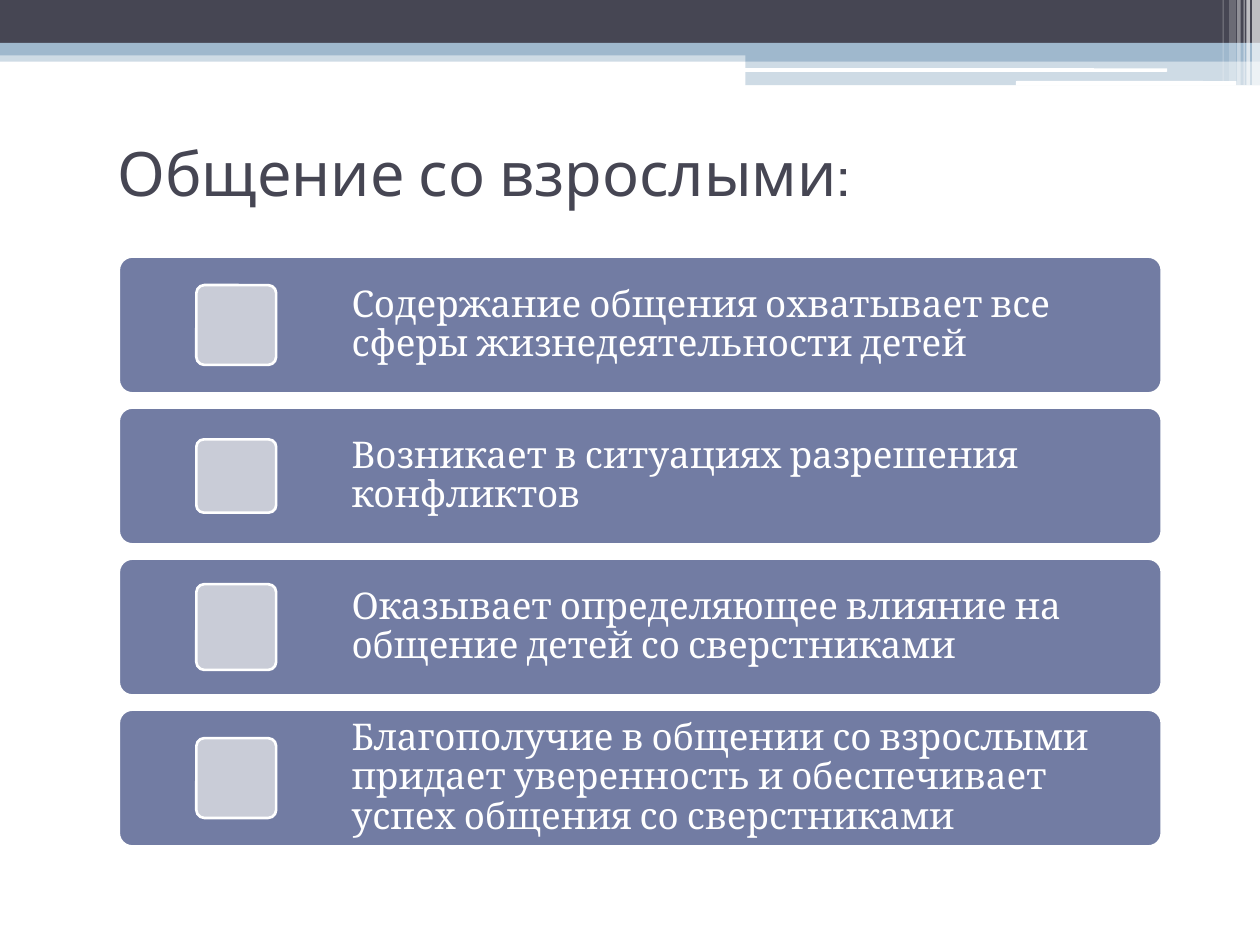
import pptx
import pptx.dml.color
import pptx.enum.shapes
import pptx.enum.text
import pptx.oxml.ns
import pptx.util
from lxml import etree

Pt = pptx.util.Pt
SHAPE = pptx.enum.shapes.MSO_SHAPE

DARK, SKY, WHITE = "464653", "9FB8CD", "FFFFFF"
BAR, MARKER = "727CA3", "C9CCD7"

# left, top, width, height, colour, opacity in percent
BANDS = [
    (0, 28.8, 720, 6.5, SKY, 50),
    (0, 0, 720, 24.5, DARK, 100),
    (0, 24.5, 720, 7.2, SKY, 100),
    (426, 28, 294, 7.2, SKY, 100),
    (426, 35.2, 294, 13.5, SKY, 50),
]
# left, top, width, height
SLITS = [(425.5, 39, 241.5, 2), (580.5, 46.3, 126, 2.7)]
# left, width, height, opacity in percent
STRIPES = [
    (715.5, 4.5, 48.8, 65),
    (712.2, 2, 48.8, 65),
    (710.6, 0.7, 48.8, 60),
    (707, 2, 48.8, 40),
    (702.3, 4, 46.2, 20),
    (698.6, 0.7, 46.2, 30),
]
# text, marker height
ROWS = [
    ("Содержание общения охватывает все сферы жизнедеятельности детей", 45.6),
    ("Возникает в ситуациях разрешения конфликтов", 41.8),
    ("Оказывает определяющее влияние на общение детей со сверстниками", 49),
    ("Благополучие в общении со взрослыми придает уверенность и "
     "обеспечивает успех общения со сверстниками", 45.6),
]
ROW_TOP, ROW_PITCH, ROW_HEIGHT = 146.6, 86.3, 78.2


def rgb(color):
    return pptx.dml.color.RGBColor.from_string(color)


def add_box(slide, box, color, opacity=100, radius=None, outlined=False):
    """Add a filled rectangle, rounded when a radius ratio is given."""
    kind = SHAPE.RECTANGLE if radius is None else SHAPE.ROUNDED_RECTANGLE
    s = slide.shapes.add_shape(kind, *map(Pt, box))
    s.shadow.inherit = False
    if radius is not None:
        s.adjustments[0] = radius
    s.fill.solid()
    s.fill.fore_color.rgb = rgb(color)
    if opacity < 100:
        clr = s.fill._xPr.find(".//" + pptx.oxml.ns.qn("a:srgbClr"))
        etree.SubElement(clr, pptx.oxml.ns.qn("a:alpha"), val=str(opacity * 1000))
    if outlined:
        s.line.color.rgb = rgb(WHITE)
        s.line.width = Pt(1.5)
    else:
        s.line.fill.background()


def add_text(slide, box, text, font, size, color, left_inset, spacing=1.0):
    tf = slide.shapes.add_textbox(*map(Pt, box)).text_frame
    tf.word_wrap = True
    tf.vertical_anchor = pptx.enum.text.MSO_ANCHOR.MIDDLE
    tf.margin_left = Pt(left_inset)
    tf.text = text
    p = tf.paragraphs[0]
    p.line_spacing = spacing
    r = p.runs[0]
    r.font.name = font
    r.font.size = Pt(size)
    r.font.color.rgb = rgb(color)


def add_header(slide):
    for *box, color, opacity in BANDS:
        add_box(slide, box, color, opacity)
    for box in SLITS:
        add_box(slide, box, WHITE, radius=0.167)
    for left, width, height, opacity in STRIPES:
        add_box(slide, (left, 0, width, height), WHITE, opacity)


def add_row(slide, top, text, marker_height):
    """Add a bar with its text and a vertically centred marker."""
    marker_top = top + (ROW_HEIGHT - marker_height) / 2
    add_box(slide, (67.9, top, 596, ROW_HEIGHT), BAR, radius=0.1, outlined=True)
    add_text(slide, (194.4, top, 469.5, ROW_HEIGHT), text,
             "Cambria", 21, WHITE, 6.5, 0.9)
    add_box(slide, (112.2, marker_top, 45.6, marker_height), MARKER,
            radius=0.1, outlined=True)


def main():
    prs = pptx.Presentation()
    prs.slide_width, prs.slide_height = Pt(720), Pt(540)
    slide = prs.slides.add_slide(prs.slide_layouts[6])
    add_header(slide)
    add_text(slide, (39.6, 56.2, 648, 84.2), "Общение со взрослыми:",
             "Cabin", 35, DARK, 27.4)
    for i, (text, marker_height) in enumerate(ROWS):
        add_row(slide, ROW_TOP + i * ROW_PITCH, text, marker_height)
    prs.save("out.pptx")


if __name__ == "__main__":
    main()
